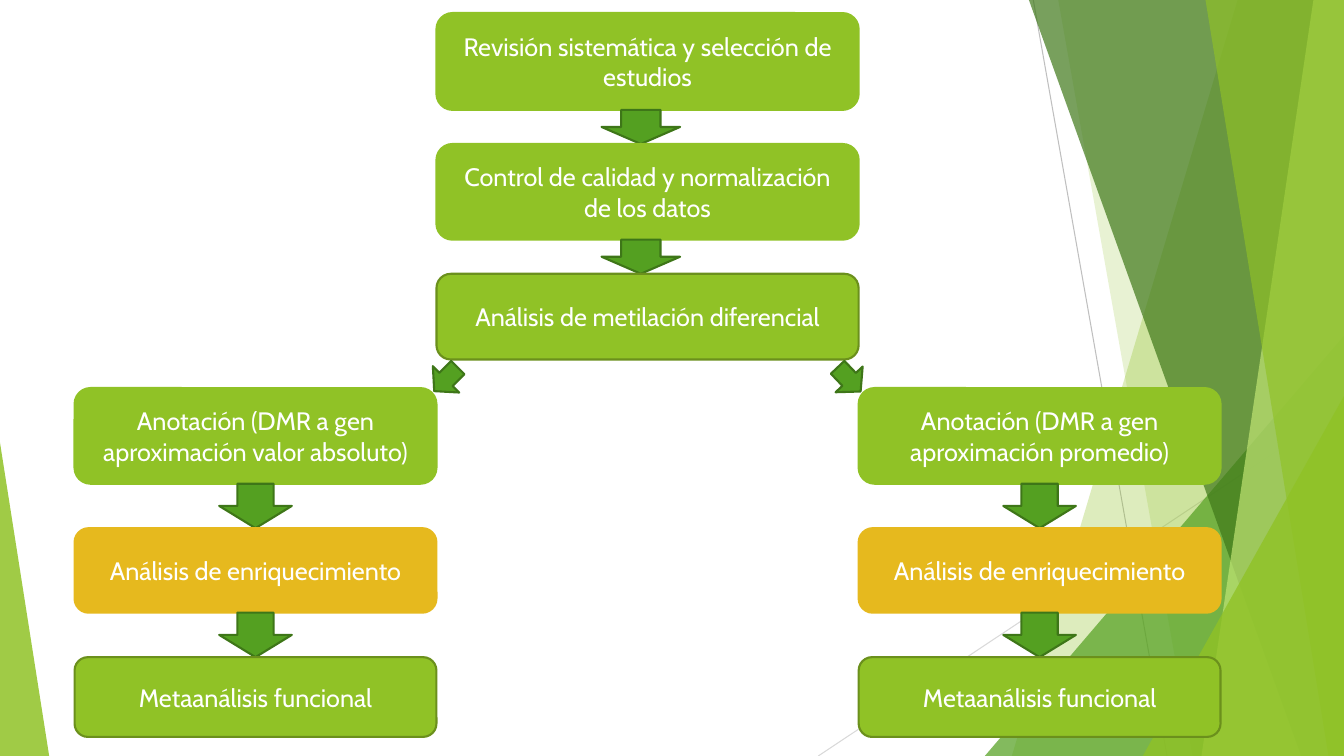
from lxml.etree import SubElement
from pptx import Presentation
from pptx.dml.color import RGBColor
from pptx.enum.shapes import MSO_CONNECTOR, MSO_SHAPE as Preset
from pptx.enum.text import MSO_ANCHOR, PP_ALIGN
from pptx.oxml.ns import qn
from pptx.util import Cm, Pt

WIDTH, HEIGHT = 33.87, 19.05
COLORS = {
    "white": "FFFFFF", "lime": "90C226", "olive": "6B901C", "gold": "E6B91E",
    "green": "54A021", "forest": "3E7618", "moss": "3F7819", "pale": "C0E474",
    "gray": "BFBFBF", "silver": "D9D9D9",
}


def color(name):
    """Return the named colour."""
    return RGBColor.from_string(COLORS[name])


def paint(shape, fill, line=None, opacity=100):
    """Set the fill, outline and opacity of a shape without shadow."""
    shape.shadow.inherit = False
    shape.fill.solid()
    shape.fill.fore_color.rgb = color(fill)
    if opacity < 100:
        fill_color = shape.fill._xPr.find(qn("a:solidFill"))[0]
        SubElement(fill_color, qn("a:alpha"), val=str(opacity * 1000))
    if line:
        shape.line.color.rgb = color(line)
        shape.line.width = Pt(1.5)
    else:
        shape.line.fill.background()


def add_preset(slide, preset, box, fill, line=None, opacity=100):
    """Add a painted preset shape in a box given in centimetres."""
    shape = slide.shapes.add_shape(preset, *map(Cm, box))
    paint(shape, fill, line, opacity)
    return shape


def write(shape, text, size=18, font="Cabin", ink="white", align=PP_ALIGN.CENTER):
    """Write formatted text in a shape."""
    frame = shape.text_frame
    frame.word_wrap = True
    frame.vertical_anchor = MSO_ANCHOR.MIDDLE
    paragraph = frame.paragraphs[0]
    paragraph.alignment = align
    run = paragraph.add_run()
    run.text = text
    run.font.size = Pt(size)
    run.font.name = font
    run.font.color.rgb = color(ink)


def add_ray(slide, start, end, ink):
    """Add a thin background line."""
    ray = slide.shapes.add_connector(MSO_CONNECTOR.STRAIGHT, *map(Cm, start + end))
    ray.line.color.rgb = color(ink)
    ray.line.width = Pt(0.75)
    SubElement(ray._element.spPr, qn("a:effectLst"))


def add_facet(slide, top_x, bottom_x, fill, opacity):
    """Add a full-height facet that reaches the right edge of the slide."""
    builder = slide.shapes.build_freeform(Cm(top_x), 0)
    corners = [(WIDTH, 0), (WIDTH, HEIGHT), (bottom_x, HEIGHT)]
    builder.add_line_segments([(Cm(x), Cm(y)) for x, y in corners], close=True)
    paint(builder.convert_to_shape(), fill, opacity=opacity)


def add_corner(slide, left, top, width, apex, fill, opacity):
    """Add a right triangle that stands on the bottom edge."""
    box = (left, top, width, HEIGHT - top)
    triangle = add_preset(slide, Preset.ISOSCELES_TRIANGLE, box, fill, opacity=opacity)
    triangle.adjustments[0] = apex


def add_background(slide):
    """Draw the translucent facets at both sides of the slide."""
    add_ray(slide, (26.04, 0), (29.41, HEIGHT), "gray")
    add_ray(slide, (WIDTH, 10.24), (20.62, HEIGHT), "silver")
    add_facet(slide, 31.19, 25.5, "lime", 30)
    add_facet(slide, 26.67, 30.05, "lime", 20)
    add_corner(slide, 24.82, 8.46, 9.05, 1, "green", 72)
    add_facet(slide, 25.93, 32.79, "moss", 70)
    add_facet(slide, 33.1, 30.28, "pale", 70)
    add_facet(slide, 30.38, 33.48, "lime", 65)
    add_corner(slide, 28.8, 9.98, 5.07, 1, "lime", 80)
    add_corner(slide, 0, 11.15, 1.24, 0, "lime", 85)


def add_arrow(slide, box, rotation=0):
    """Add a green block arrow that points down before its rotation."""
    arrow = add_preset(slide, Preset.DOWN_ARROW, box, "green", "forest")
    arrow.rotation = rotation


def add_column(slide, left, top, width, gap, arrow_width, steps, shift=0):
    """Stack the steps in a column and join them with arrows."""
    arrow_left = left + (width - arrow_width) / 2 + shift
    for index, (text, height, fill, line) in enumerate(steps):
        if index:
            add_arrow(slide, (arrow_left, top - gap, arrow_width, gap))
        box = (left, top, width, height)
        write(add_preset(slide, Preset.ROUNDED_RECTANGLE, box, fill, line), text)
        top += height + gap


def add_branch(slide, left, method):
    """Add one branch of the analysis for an annotation method."""
    steps = [
        (f"Anotación (DMR a gen aproximación {method})", 2.41, "lime", "lime"),
        ("Análisis de enriquecimiento", 2.13, "gold", "gold"),
        ("Metaanálisis funcional", 2.01, "lime", "olive"),
    ]
    add_column(slide, left, 9.78, 9.12, 1.12, 1.83, steps)


def main():
    """Build and save the workflow slide."""
    presentation = Presentation()
    presentation.slide_width, presentation.slide_height = Cm(WIDTH), Cm(HEIGHT)
    slide = presentation.slides.add_slide(presentation.slide_layouts[6])
    add_background(slide)
    trunk = [
        ("Revisión sistemática y selección de estudios", 2.44, "lime", "lime"),
        ("Control de calidad y normalización de los datos", 2.41, "lime", "lime"),
        ("Análisis de metilación diferencial", 2.16, "lime", "olive"),
    ]
    add_column(slide, 11, 0.33, 10.64, 0.86, 1.98, trunk, shift=-0.17)
    add_branch(slide, 1.88, "valor absoluto")
    add_branch(slide, 21.64, "promedio")
    for left, rotation in ((10.77, 45), (20.93, 316.5)):
        add_arrow(slide, (left, 9.14, 0.94, 0.84), rotation)
    presentation.save("out.pptx")


if __name__ == "__main__":
    main()
